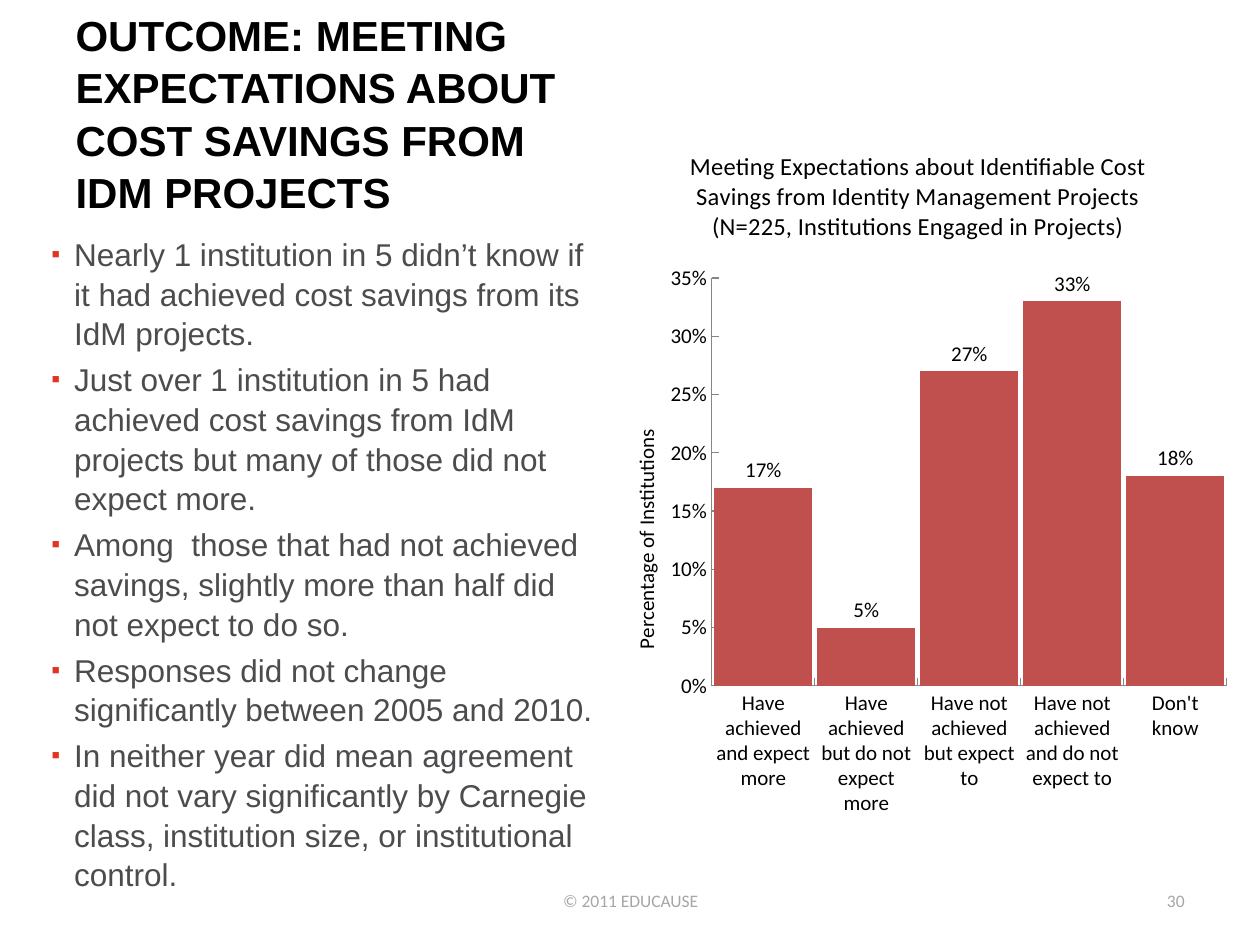
from lxml.etree import SubElement
from pptx import Presentation
from pptx.chart.data import CategoryChartData
from pptx.dml.color import RGBColor
from pptx.enum.chart import XL_CHART_TYPE, XL_LABEL_POSITION, XL_TICK_MARK
from pptx.enum.text import MSO_ANCHOR, MSO_AUTO_SIZE, PP_ALIGN
from pptx.oxml import parse_xml
from pptx.oxml.ns import nsdecls, qn
from pptx.util import Inches, Pt

TITLE = "OUTCOME: MEETING EXPECTATIONS ABOUT COST SAVINGS FROM IDM PROJECTS"
POINTS = [
    "Nearly 1 institution in 5 didn’t know if it had achieved cost savings from its IdM projects.",
    "Just over 1 institution in 5 had achieved cost savings from IdM projects but many of those did not expect more.",
    "Among  those that had not achieved savings, slightly more than half did not expect to do so.",
    "Responses did not change significantly between 2005 and 2010.",
    "In neither year did mean agreement did not vary significantly by Carnegie class, "
    "institution size, or institutional control.",
]
HEAD = ("Meeting Expectations about Identifiable Cost Savings from Identity Management "
        "Projects (N=225, Institutions Engaged in Projects)")
SIDE = "Percentage of Institutions"
SHARES = {
    "Have achieved and expect more": 0.17,
    "Have achieved but do not expect more": 0.05,
    "Have not achieved but expect to": 0.27,
    "Have not achieved and do not expect to": 0.33,
    "Don't know": 0.18,
}
FOOTERS = [
    ("© 2011 EDUCAUSE", 3.42, 3.17, PP_ALIGN.CENTER),
    ("30", 7.17, 2.33, PP_ALIGN.RIGHT),
]
BLACK, INK, GREY, RED, BAR, AXIS = "000000", "4C4C4F", "A6A6A6", "E33323", "C0504D", "868686"


def style(font, size, color, name, bold=False):
    font.size, font.name, font.bold = Pt(size), name, bold
    font.color.rgb = RGBColor.from_string(color)


def box(slide, left, top, width, height):
    frame = slide.shapes.add_textbox(*map(Inches, (left, top, width, height))).text_frame
    frame.word_wrap = True
    return frame


def bullet(para):
    props = para._p.get_or_add_pPr()
    props.set("marL", str(Inches(0.18)))
    props.set("indent", str(-Inches(0.18)))
    gap = SubElement(props, qn("a:spcBef"))
    SubElement(gap, qn("a:spcPct"), val="20000")
    color = SubElement(props, qn("a:buClr"))
    SubElement(color, qn("a:srgbClr"), val=RED)
    SubElement(props, qn("a:buSzPct"), val="80000")
    SubElement(props, qn("a:buFont"), typeface="Arial")
    SubElement(props, qn("a:buChar"), char="▪")


def place(node, after, inner=False, **shares):
    """Give a chart part a fixed place, in shares of the chart's size."""
    for old in node.findall(qn("c:layout")):
        node.remove(old)
    target = '<c:layoutTarget val="inner"/>' if inner else ""
    modes = "".join(f'<c:{k}Mode val="edge"/>' for k in "xy")
    parts = "".join(f'<c:{k} val="{v}"/>' for k, v in shares.items())
    layout = parse_xml(f'<c:layout {nsdecls("c")}><c:manualLayout>{target}{modes}{parts}'
                       '</c:manualLayout></c:layout>')
    node.insert(after, layout)


def caption(title, text, size):
    title.text_frame.text = text
    style(title.text_frame.paragraphs[0].font, size, BLACK, "Calibri")


def draw(slide):
    data = CategoryChartData(number_format="0%")
    data.categories = list(SHARES)
    data.add_series("Series 1", list(SHARES.values()))
    chart = slide.shapes.add_chart(XL_CHART_TYPE.COLUMN_CLUSTERED,
                                   *map(Inches, (4.73, 0.98, 5.11, 5.58)), data).chart
    style(chart.font, 18, BLACK, "Calibri")
    chart.has_legend = False
    caption(chart.chart_title, HEAD, 14)
    chart.chart_title.include_in_layout = False

    rise = chart.value_axis
    for axis in (chart.category_axis, rise):
        axis.major_tick_mark, axis.minor_tick_mark = XL_TICK_MARK.INSIDE, XL_TICK_MARK.NONE
        axis.has_major_gridlines = False
        axis.format.line.color.rgb = RGBColor.from_string(AXIS)
        style(axis.tick_labels.font, 12, BLACK, "Calibri")
    rise.minimum_scale, rise.maximum_scale, rise.major_unit = 0, 0.35, 0.05
    rise.tick_labels.number_format = "0%"
    rise.tick_labels.number_format_is_linked = False
    caption(rise.axis_title, SIDE, 12)
    place(rise.axis_title._element, 1, x=0.05, y=0.43)

    plot = chart.plots[0]
    plot.gap_width, plot.vary_by_categories = 5, False
    fill = plot.series[0].format.fill
    fill.solid()
    fill.fore_color.rgb = RGBColor.from_string(BAR)
    plot.has_data_labels = True
    labels = plot.data_labels
    labels.show_value, labels.position = True, XL_LABEL_POSITION.OUTSIDE_END
    labels.number_format, labels.number_format_is_linked = "0%", False
    style(labels.font, 12, BLACK, "Calibri")
    area = chart._chartSpace.find(f'.//{qn("c:plotArea")}')
    place(area, 0, inner=True, x=0.18, y=0.22, w=0.8, h=0.58)


def main():
    deck = Presentation()
    deck.slide_width, deck.slide_height = Inches(10), Inches(7.5)
    slide = deck.slides.add_slide(deck.slide_layouts[5])

    title = slide.shapes.title
    title.left, title.top, title.width, title.height = map(Inches, (0.5, 0.01, 4.07, 1.75))
    frame = title.text_frame
    frame.text, frame.word_wrap = TITLE, True
    frame.auto_size, frame.vertical_anchor = MSO_AUTO_SIZE.NONE, MSO_ANCHOR.TOP
    para = frame.paragraphs[0]
    para.alignment, para.line_spacing = PP_ALIGN.LEFT, 1.04
    style(para.font, 24, BLACK, "Arial", True)

    frame = box(slide, 0.31, 1.8, 4.6, 5.92)
    for i, text in enumerate(POINTS):
        para = frame.add_paragraph() if i else frame.paragraphs[0]
        para.text = text
        bullet(para)
        if i == 0:
            para.space_before = Pt(0)
        para.line_spacing = 1.05
        style(para.font, 18, INK, "Arial")

    draw(slide)

    for text, left, width, align in FOOTERS:
        frame = box(slide, left, 6.95, width, 0.4)
        frame.vertical_anchor = MSO_ANCHOR.MIDDLE
        para = frame.paragraphs[0]
        para.text, para.alignment = text, align
        style(para.font, 10, GREY, "Calibri")

    deck.save("out.pptx")


if __name__ == "__main__":
    main()
